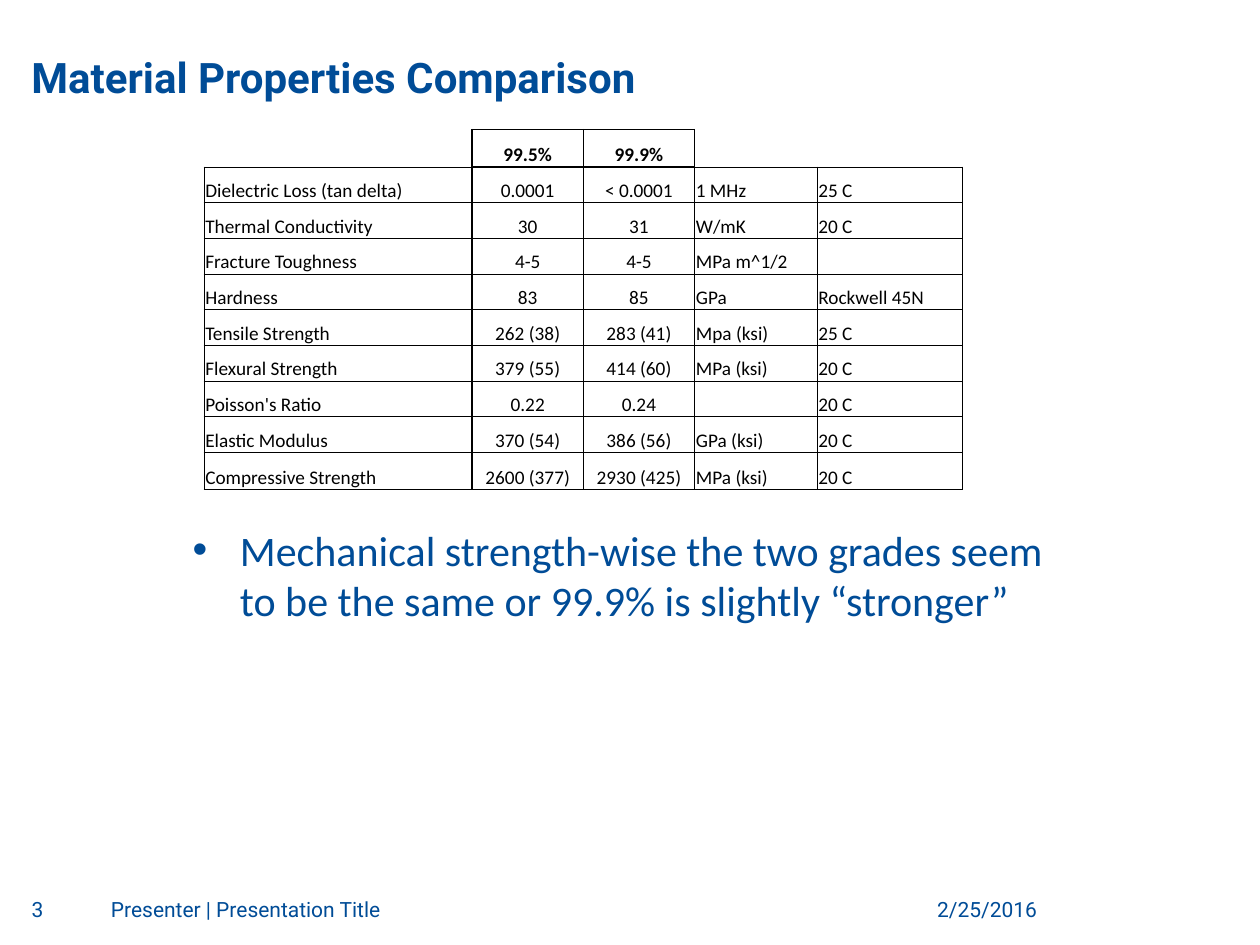
from lxml import etree
from pptx import Presentation
from pptx.dml.color import RGBColor
from pptx.enum.text import MSO_ANCHOR, PP_ALIGN
from pptx.oxml.ns import qn
from pptx.util import Pt

LEFT, CENTER, RIGHT = PP_ALIGN.LEFT, PP_ALIGN.CENTER, PP_ALIGN.RIGHT
TOP, BOTTOM = MSO_ANCHOR.TOP, MSO_ANCHOR.BOTTOM

COLORS = {"blue": "004C97", "black": "000000"}
THIN, THICK = 0.5, 1
GRADE_COLUMNS = (1, 2)

COLUMN_WIDTHS = [153.2, 63.6, 63.6, 70, 83]
END_ROW_HEIGHT, ROW_HEIGHT = 21.4, 20.4
PROPERTIES = [
    ["", "99.5%", "99.9%", "", ""],
    ["Dielectric Loss (tan delta)", "0.0001", "< 0.0001", "1 MHz", "25 C"],
    ["Thermal Conductivity", "30", "31", "W/mK", "20 C"],
    ["Fracture Toughness", "4-5", "4-5", "MPa m^1/2", ""],
    ["Hardness", "83", "85", "GPa", "Rockwell 45N"],
    ["Tensile Strength", "262 (38)", "283 (41)", "Mpa (ksi)", "25 C"],
    ["Flexural Strength", "379 (55)", "414 (60)", "MPa (ksi)", "20 C"],
    ["Poisson's Ratio", "0.22", "0.24", "", "20 C"],
    ["Elastic Modulus", "370 (54)", "386 (56)", "GPa (ksi)", "20 C"],
    ["Compressive Strength", "2600 (377)", "2930 (425)", "MPa (ksi)", "20 C"],
]

# left, width, text, alignment
FOOTER = [
    (507.6, 85, "2/25/2016", RIGHT),
    (63.4, 423.4, "Presenter | Presentation Title", LEFT),
    (18, 35.3, "3", LEFT),
]


def write_text(frame, text, *, size, font="Roboto", color="blue", bold=False,
               align=LEFT, bullet=None, indent=0):
    """Fill the first paragraph of a text frame with formatted text."""
    para = frame.paragraphs[0]
    para.alignment = align
    if bullet:
        properties = para._p.get_or_add_pPr()
        properties.set("marL", str(Pt(indent)))
        properties.set("indent", str(-Pt(indent)))
        etree.SubElement(properties, qn("a:buFont"), typeface="Arial")
        etree.SubElement(properties, qn("a:buChar"), char=bullet)
    if not text:
        # An empty cell still needs a small font to keep its row height
        etree.SubElement(para._p, qn("a:endParaRPr"), sz=str(size * 100))
        return
    span = para.add_run()
    span.text = text
    span.font.name = font
    span.font.size = Pt(size)
    span.font.bold = bold
    span.font.color.rgb = RGBColor.from_string(COLORS[color])


def add_text(page, text, left, top, width, height, *, anchor=TOP,
             insets=(0, 0), **text_format):
    """Add a wrapping text box; insets are horizontal and vertical."""
    box = page.shapes.add_textbox(Pt(left), Pt(top), Pt(width), Pt(height))
    frame = box.text_frame
    frame.word_wrap = True
    frame.vertical_anchor = anchor
    frame.margin_left = frame.margin_right = Pt(insets[0])
    frame.margin_top = frame.margin_bottom = Pt(insets[1])
    write_text(frame, text, **text_format)


def vertical_border(row, edge):
    """Width of the vertical line at a column edge, 0 for none."""
    if edge in (GRADE_COLUMNS[0], GRADE_COLUMNS[-1] + 1):
        return THICK
    return THIN if row > 0 or edge in GRADE_COLUMNS else 0


def horizontal_border(edge, column):
    """Width of the horizontal line at a row edge, 0 for none."""
    if column in GRADE_COLUMNS and edge in (0, 1, len(PROPERTIES)):
        return THICK
    return THIN if edge > 0 else 0


def set_borders(cell, row, column):
    properties = cell._tc.get_or_add_tcPr()
    widths = {
        "a:lnL": vertical_border(row, column),
        "a:lnR": vertical_border(row, column + 1),
        "a:lnT": horizontal_border(row, column),
        "a:lnB": horizontal_border(row + 1, column),
    }
    for tag, width in widths.items():
        line = etree.SubElement(properties, qn(tag), w=str(Pt(width)))
        if width:
            fill = etree.SubElement(line, qn("a:solidFill"))
            etree.SubElement(fill, qn("a:srgbClr"), val=COLORS["black"])
        else:
            etree.SubElement(line, qn("a:noFill"))


def fill_cell(cell, text, row, column):
    cell.vertical_anchor = BOTTOM
    cell.margin_left = cell.margin_right = cell.margin_top = Pt(0.72)
    cell.margin_bottom = 0
    write_text(cell.text_frame, text, size=11, font="Calibri", color="black",
               bold=row == 0,
               align=CENTER if column in GRADE_COLUMNS else LEFT)
    set_borders(cell, row, column)
    cell.fill.background()


def add_properties_table(page, left, top):
    last = len(PROPERTIES) - 1
    heights = [END_ROW_HEIGHT if row in (0, last) else ROW_HEIGHT
               for row in range(len(PROPERTIES))]
    table = page.shapes.add_table(
        len(heights), len(COLUMN_WIDTHS), Pt(left), Pt(top),
        Pt(sum(COLUMN_WIDTHS)), Pt(sum(heights))).table
    table.first_row = table.horz_banding = False
    for column, width in enumerate(COLUMN_WIDTHS):
        table.columns[column].width = Pt(width)
    for row, values in enumerate(PROPERTIES):
        table.rows[row].height = Pt(heights[row])
        for column, text in enumerate(values):
            fill_cell(table.cell(row, column), text, row, column)


def main():
    deck = Presentation()
    deck.slide_width, deck.slide_height = Pt(720), Pt(540)
    page = deck.slides.add_slide(deck.slide_layouts[6])

    # Title
    add_text(page, "Material Properties Comparison", 18, 7.9, 684, 50.4,
             anchor=BOTTOM, size=24, bold=True)

    # Footer
    for left, width, text, align in FOOTER:
        add_text(page, text, left, 512.6, width, 18.7, size=12, align=align)

    # Comparison table
    add_properties_table(page, 116.6, 74)

    # Conclusion
    add_text(page, "Mechanical strength-wise the two grades seem to be the "
             "same or 99.9% is slightly “stronger”", 103, 296, 514.8, 65.5,
             insets=(7.2, 3.6), size=24, font="Calibri", bullet="•", indent=27)

    deck.save("out.pptx")


if __name__ == "__main__":
    main()
